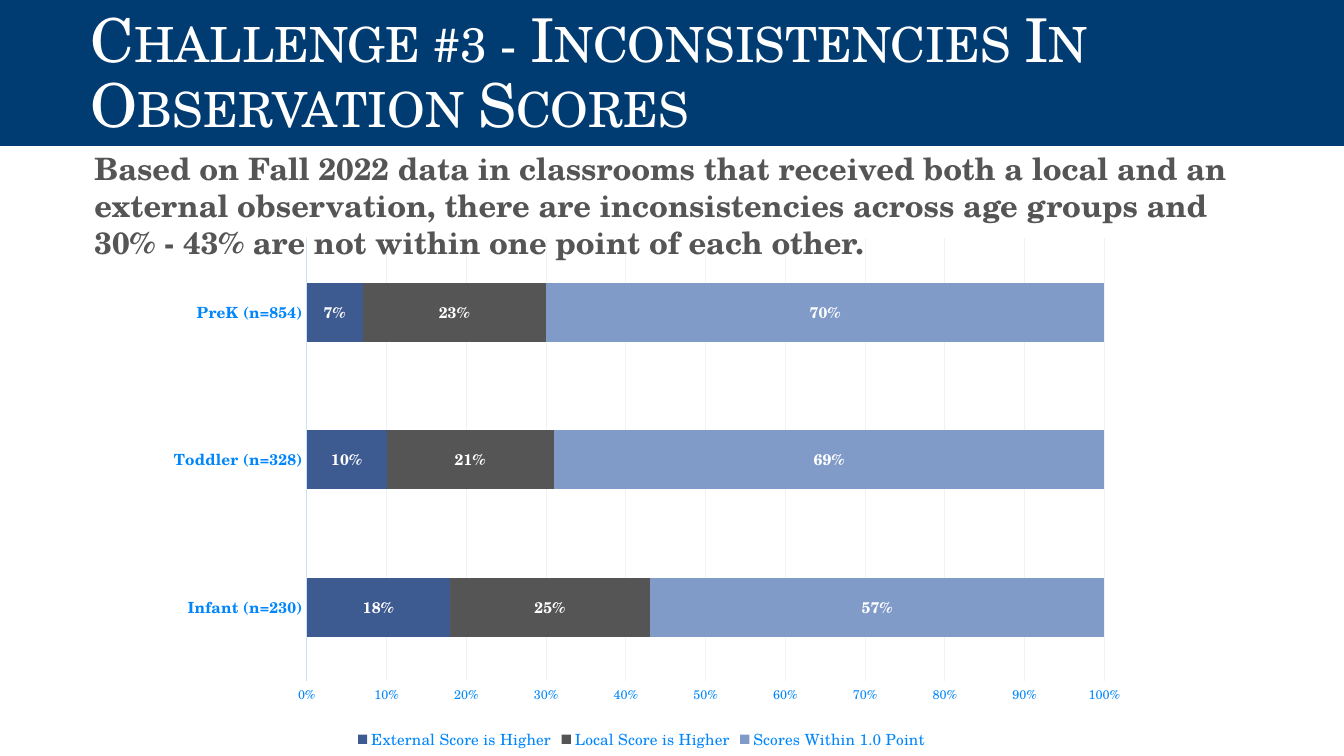
from typing import NamedTuple

import pptx
import pptx.chart.data
import pptx.dml.color
import pptx.enum.chart
import pptx.enum.shapes
import pptx.enum.text
import pptx.oxml
import pptx.oxml.ns
import pptx.util
from pptx.util import Cm, Pt

FONT = "TeX Gyre Schola"
WHITE, NAVY, GREY, BLUE = "FFFFFF", "003C71", "555555", "0086FC"
AGE_GROUPS = ["Infant (n=230)", "Toddler (n=328)", "PreK (n=854)"]


class ScoreGap(NamedTuple):
    name: str
    shares: tuple[float, ...]
    color: str


class Block(NamedTuple):
    text: str
    box: tuple[float, float, float, float]
    insets: tuple[float, float, float, float]
    size: float
    color: str
    bold: bool = False
    fill: str | None = None


SCORE_GAPS = [
    ScoreGap("External Score is Higher", (0.18, 0.10, 0.07), "3E5B91"),
    ScoreGap("Local Score is Higher", (0.25, 0.21, 0.23), GREY),
    ScoreGap("Scores Within 1.0 Point", (0.57, 0.69, 0.70), "819BC9"),
]
HEADING = Block("Challenge #3 - Inconsistencies In Observation Scores",
                (0, 0, 33.87, 3.68), (2.29, 0.13, 0.25, 0.13), 43.2, WHITE, fill=NAVY)
FINDING = Block("Based on Fall 2022 data in classrooms that received both a local and an "
                "external observation, there are inconsistencies across age groups and "
                "30% - 43% are not within one point of each other.",
                (1.7, 3.68, 30.61, 3.2), (0.18, 0.1, 0.18, 0.1), 22, GREY, bold=True)


def rgb(color: str) -> pptx.dml.color.RGBColor:
    return pptx.dml.color.RGBColor.from_string(color)


def style_font(font, size: float, color: str, bold: bool = False) -> None:
    font.name = FONT
    font.size = Pt(size)
    font.bold = bold
    font.color.rgb = rgb(color)


def style_line(line, color: str) -> None:
    line.color.rgb = rgb(color)
    line.width = Pt(0.75)


def add_block(slide, block: Block):
    """Add a text rectangle and return its paragraph."""
    shape = slide.shapes.add_shape(pptx.enum.shapes.MSO_SHAPE.RECTANGLE, *map(Cm, block.box))
    shape.shadow.inherit = False
    shape.line.fill.background()
    if block.fill:
        shape.fill.solid()
        shape.fill.fore_color.rgb = rgb(block.fill)
    else:
        shape.fill.background()
    frame = shape.text_frame
    frame.word_wrap = True
    frame.margin_left, frame.margin_top, frame.margin_right, frame.margin_bottom = map(Cm, block.insets)
    anchors = pptx.enum.text.MSO_ANCHOR
    frame.vertical_anchor = anchors.BOTTOM if block.fill else anchors.TOP
    paragraph = frame.paragraphs[0]
    paragraph.text = block.text
    paragraph.alignment = pptx.enum.text.PP_ALIGN.LEFT
    style_font(paragraph.font, block.size, block.color, block.bold)
    return paragraph


def place_plot(chart, x: float, y: float, w: float, h: float) -> None:
    """Fix the inner plot area, in fractions of the chart."""
    sizes = "".join(f'<c:{tag} val="{value}"/>' for tag, value in zip("xywh", (x, y, w, h)))
    layout = pptx.oxml.parse_xml(
        f'<c:layout {pptx.oxml.ns.nsdecls("c")}><c:manualLayout><c:layoutTarget val="inner"/>'
        f'<c:xMode val="edge"/><c:yMode val="edge"/>{sizes}</c:manualLayout></c:layout>')
    plot_area = chart.plots[0]._element.getparent()
    for automatic in plot_area.findall(pptx.oxml.ns.qn("c:layout")):
        plot_area.remove(automatic)
    plot_area.insert(0, layout)


def add_score_chart(slide) -> None:
    kinds = pptx.enum.chart
    data = pptx.chart.data.CategoryChartData(number_format="0%")
    data.categories = AGE_GROUPS
    for gap in SCORE_GAPS:
        data.add_series(gap.name, gap.shares)
    chart = slide.shapes.add_chart(kinds.XL_CHART_TYPE.BAR_STACKED_100, Cm(3.76), Cm(5.74),
                                   Cm(24.82), Cm(13.28), data).chart
    chart.has_title = False
    chart.font.name = "Arial"
    chart.font.size = Pt(10)
    chart.font.color.rgb = rgb(NAVY)
    place_plot(chart, 0.16, 0.02, 0.81, 0.84)

    bars = chart.plots[0]
    bars.gap_width, bars.overlap, bars.vary_by_categories = 150, 100, False
    for series, gap in zip(bars.series, SCORE_GAPS):
        series.format.fill.solid()
        series.format.fill.fore_color.rgb = rgb(gap.color)
        labels = series.data_labels
        labels.show_value = True
        labels.number_format, labels.number_format_is_linked = "0%", False
        labels.position = kinds.XL_LABEL_POSITION.CENTER
        style_font(labels.font, 11, WHITE, bold=True)

    ages, shares = chart.category_axis, chart.value_axis
    for axis in (ages, shares):
        axis.major_tick_mark = axis.minor_tick_mark = kinds.XL_TICK_MARK.NONE
    style_font(ages.tick_labels.font, 11, BLUE, bold=True)
    style_line(ages.format.line, "C3E3FF")
    style_font(shares.tick_labels.font, 9, BLUE)
    shares.tick_labels.number_format = "0%"
    shares.tick_labels.number_format_is_linked = False
    shares.minimum_scale, shares.maximum_scale, shares.major_unit = 0, 1, 0.1
    shares.format.line.fill.background()
    shares.has_major_gridlines = True
    style_line(shares.major_gridlines.format.line, "F2F2F2")

    chart.has_legend = True
    chart.legend.position = kinds.XL_LEGEND_POSITION.BOTTOM
    chart.legend.include_in_layout = False
    style_font(chart.legend.font, 11, BLUE)


def main() -> None:
    deck = pptx.Presentation()
    deck.slide_width, deck.slide_height = Cm(33.87), Cm(19.05)
    slide = deck.slides.add_slide(deck.slide_layouts[6])

    heading = add_block(slide, HEADING)
    heading.line_spacing = 0.9
    heading.font._element.set("cap", "small")
    add_score_chart(slide)
    finding = add_block(slide, FINDING)
    finding.space_before = Pt(10)
    finding._p.get_or_add_pPr().set("marL", str(Cm(0.5)))

    deck.save("out.pptx")


if __name__ == "__main__":
    main()
